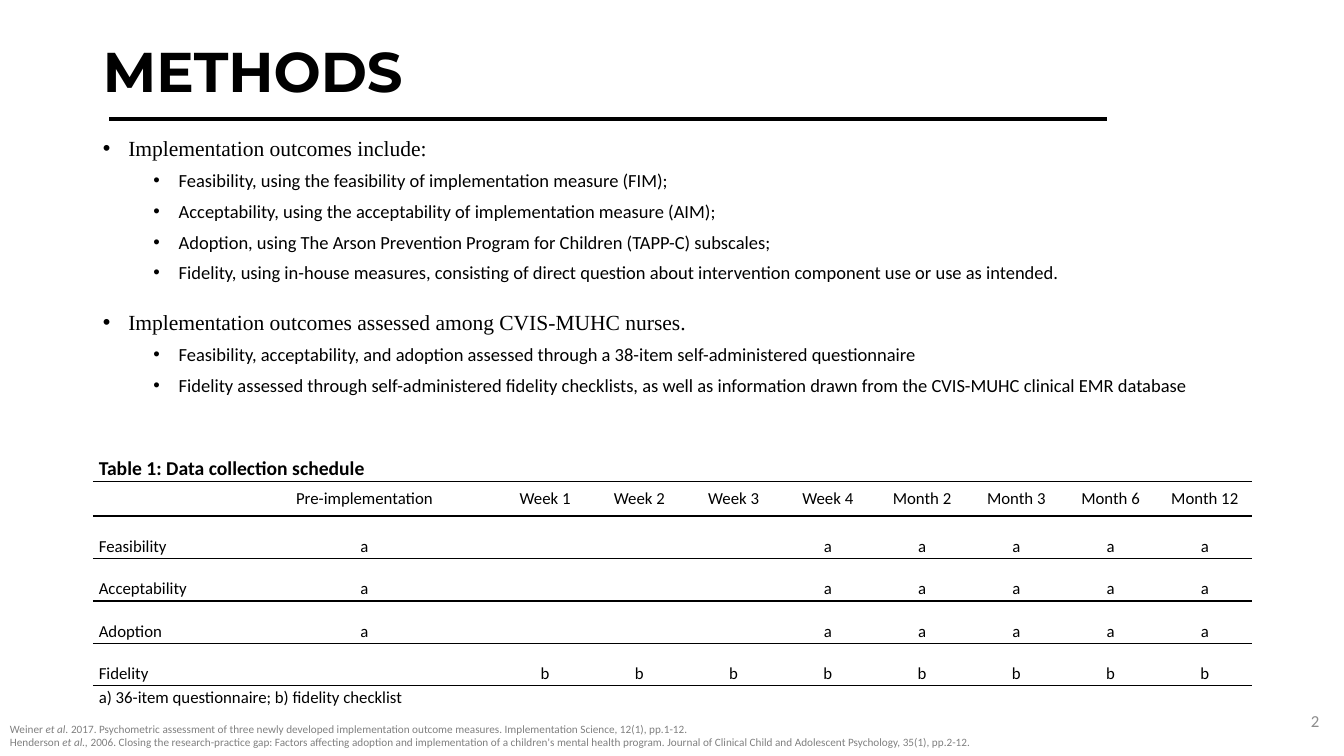
from dataclasses import dataclass

from lxml.etree import SubElement
from pptx import Presentation
from pptx.dml.color import RGBColor
from pptx.enum.shapes import MSO_CONNECTOR
from pptx.enum.text import MSO_ANCHOR, MSO_AUTO_SIZE, PP_ALIGN
from pptx.oxml import parse_xml
from pptx.oxml.ns import nsdecls, qn
from pptx.util import Cm, Pt


@dataclass(frozen=True)
class Theme:
    black: RGBColor = RGBColor(0x00, 0x00, 0x00)
    page_grey: RGBColor = RGBColor(0x8C, 0x8C, 0x8C)
    reference_grey: RGBColor = RGBColor(0x80, 0x80, 0x80)
    title_font: str = "Montserrat"
    heading_font: str = "Times New Roman"
    text_font: str = "Calibri"
    title_size: float = 40
    heading_size: float = 15.4
    item_size: float = 13.2
    caption_size: float = 14
    table_size: float = 12
    reference_size: float = 8


theme = Theme()


def format_runs(paragraph, name, size, color, bold=False):
    for run in paragraph.runs:
        run.font.name = name
        run.font.size = Pt(size)
        run.font.color.rgb = color
        run.font.bold = bold


def set_borders(cell, top, bottom):
    """Rule the cell above and below as asked, and leave its sides open."""
    properties = cell._tc.get_or_add_tcPr()
    sides = (("lnL", False), ("lnR", False), ("lnT", top), ("lnB", bottom))
    for index, (side, ruled) in enumerate(sides):
        paint = (f'<a:solidFill><a:srgbClr val="{theme.black}"/></a:solidFill>'
                 if ruled else "<a:noFill/>")
        properties.insert(index, parse_xml(
            f'<a:{side} {nsdecls("a")} w="{Pt(1)}">{paint}</a:{side}>'))


presentation = Presentation()
presentation.slide_width = Cm(33.87)
presentation.slide_height = Cm(19.05)
slide = presentation.slides.add_slide(presentation.slide_layouts[1])
left, width = Cm(2.34), Cm(29.21)

# Title and its rule
title = slide.shapes.title
title.left, title.top, title.width, title.height = left, Cm(0.03), width, Cm(3.68)
title.text_frame.text = "METHODS"
title.text_frame.auto_size = MSO_AUTO_SIZE.NONE
title.text_frame.vertical_anchor = MSO_ANCHOR.MIDDLE
paragraph = title.text_frame.paragraphs[0]
paragraph.alignment = PP_ALIGN.LEFT
paragraph.line_spacing = 0.9
format_runs(paragraph, theme.title_font, theme.title_size, theme.black, bold=True)

rule = slide.shapes.add_connector(
    MSO_CONNECTOR.STRAIGHT, Cm(2.75), Cm(3), Cm(27.89), Cm(3))
rule.line.color.rgb = theme.black
rule.line.width = Pt(2.25)
SubElement(rule._element.spPr, qn("a:effectLst"))

# Outcomes
outcomes = [
    (0, "Implementation outcomes include:"),
    (1, "Feasibility, using the feasibility of implementation measure (FIM);"),
    (1, "Acceptability, using the acceptability of implementation measure (AIM);"),
    (1, "Adoption, using The Arson Prevention Program for Children (TAPP-C) subscales;"),
    (1, "Fidelity, using in-house measures, consisting of direct question about "
        "intervention component use or use as intended."),
    (0, "Implementation outcomes assessed among CVIS-MUHC nurses."),
    (1, "Feasibility, acceptability, and adoption assessed through a 38-item "
        "self-administered questionnaire"),
    (1, "Fidelity assessed through self-administered fidelity checklists, as well as "
        "information drawn from the CVIS-MUHC clinical EMR database"),
]
level_styles = [
    (theme.heading_font, theme.heading_size, 18, Cm(0.64)),
    (theme.text_font, theme.item_size, 6, Cm(1.91)),
]
body = slide.placeholders[1]
body.left, body.top, body.width, body.height = left, Cm(3.28), width, Cm(7.65)
body_frame = body.text_frame
body_frame.text = "\n".join(text for level, text in outcomes)
body_frame.auto_size = MSO_AUTO_SIZE.NONE
for index, (level, text) in enumerate(outcomes):
    paragraph = body_frame.paragraphs[index]
    font, size, space_before, indent = level_styles[level]
    paragraph.level = level
    paragraph.line_spacing = 1.0
    paragraph.space_before = Pt(space_before if index else 0)
    properties = paragraph._p.get_or_add_pPr()
    properties.set("marL", str(indent))
    properties.set("indent", str(-Cm(0.64)))
    SubElement(properties, qn("a:buFont"), typeface="Arial")
    SubElement(properties, qn("a:buChar"), char="•")
    format_runs(paragraph, font, size, theme.black)

# Data collection schedule
periods = ["Pre-implementation", "Week 1", "Week 2", "Week 3", "Week 4",
           "Month 2", "Month 3", "Month 6", "Month 12"]
questionnaire = ["a", "", "", "", "a", "a", "a", "a", "a"]
rows = [
    ["Table 1: Data collection schedule"],
    ["", *periods],
    ["Feasibility", *questionnaire],
    ["Acceptability", *questionnaire],
    ["Adoption", *questionnaire],
    ["Fidelity", "", *["b"] * 8],
    ["a) 36-item questionnaire; b) fidelity checklist"],
]
row_heights = [1.19, 0.88, 1.07, 1.07, 1.07, 1.07, 0.46]
caption_row, header_row, note_row = 0, 1, len(rows) - 1
column_count = len(periods) + 1

schedule = slide.shapes.add_table(
    len(rows), column_count, left, Cm(10.92), width, Cm(sum(row_heights))).table
schedule.first_row = False
schedule.horz_banding = False
label_width, first_period_width = Cm(3.48), Cm(6.73)
period_width = (width - label_width - first_period_width) // (column_count - 2)
for index, column in enumerate(schedule.columns):
    column.width = (label_width, first_period_width)[index] if index < 2 else period_width

for row_index, texts in enumerate(rows):
    schedule.rows[row_index].height = Cm(row_heights[row_index])
    for column_index in range(column_count):
        cell = schedule.cell(row_index, column_index)
        cell.fill.background()
        set_borders(cell, row_index != caption_row, row_index != note_row)
        cell.margin_top = cell.margin_bottom = 0
        cell.margin_left = cell.margin_right = Cm(0.05 if row_index == header_row else 0.15)
        if row_index == header_row:
            cell.vertical_anchor = MSO_ANCHOR.MIDDLE
        if column_index >= len(texts) or not texts[column_index]:
            continue
        cell.text_frame.text = texts[column_index]
        paragraph = cell.text_frame.paragraphs[0]
        paragraph.alignment = PP_ALIGN.CENTER if column_index else PP_ALIGN.LEFT
        paragraph.line_spacing = 1.07 if row_index in (header_row, note_row) else 2.0
        paragraph.space_after = Pt(8)
        is_caption = row_index == caption_row
        format_runs(paragraph, theme.text_font,
                    theme.caption_size if is_caption else theme.table_size,
                    theme.black, bold=is_caption)
for row_index in (caption_row, note_row):
    schedule.cell(row_index, 0).merge(schedule.cell(row_index, column_count - 1))

# Page number
page_frame = slide.shapes.add_textbox(Cm(25.88), Cm(17.65), Cm(7.62), Cm(1.02)).text_frame
page_frame.word_wrap = True
page_frame.vertical_anchor = MSO_ANCHOR.MIDDLE
page_frame.text = "2"
page_frame.paragraphs[0].alignment = PP_ALIGN.RIGHT
format_runs(page_frame.paragraphs[0], theme.text_font, theme.table_size, theme.page_grey)

# References: author, italic part, remainder
references = [
    ("Weiner ", "et al.",
     " 2017. Psychometric assessment of three newly developed implementation outcome "
     "measures. Implementation Science, 12(1), pp.1-12."),
    ("Henderson ", "et al.,",
     " 2006. Closing the research-practice gap: Factors affecting adoption and "
     "implementation of a children's mental health program. Journal of Clinical Child "
     "and Adolescent Psychology, 35(1), pp.2-12."),
]
reference_frame = slide.shapes.add_textbox(0, Cm(18.03), Cm(28.42), Cm(1.02)).text_frame
reference_frame.word_wrap = True
reference_frame.vertical_anchor = MSO_ANCHOR.MIDDLE
for index, parts in enumerate(references):
    paragraph = reference_frame.add_paragraph() if index else reference_frame.paragraphs[0]
    for part in parts:
        paragraph.add_run().text = part
    format_runs(paragraph, theme.text_font, theme.reference_size, theme.reference_grey)
    paragraph.runs[1].font.italic = True

presentation.save("out.pptx")
